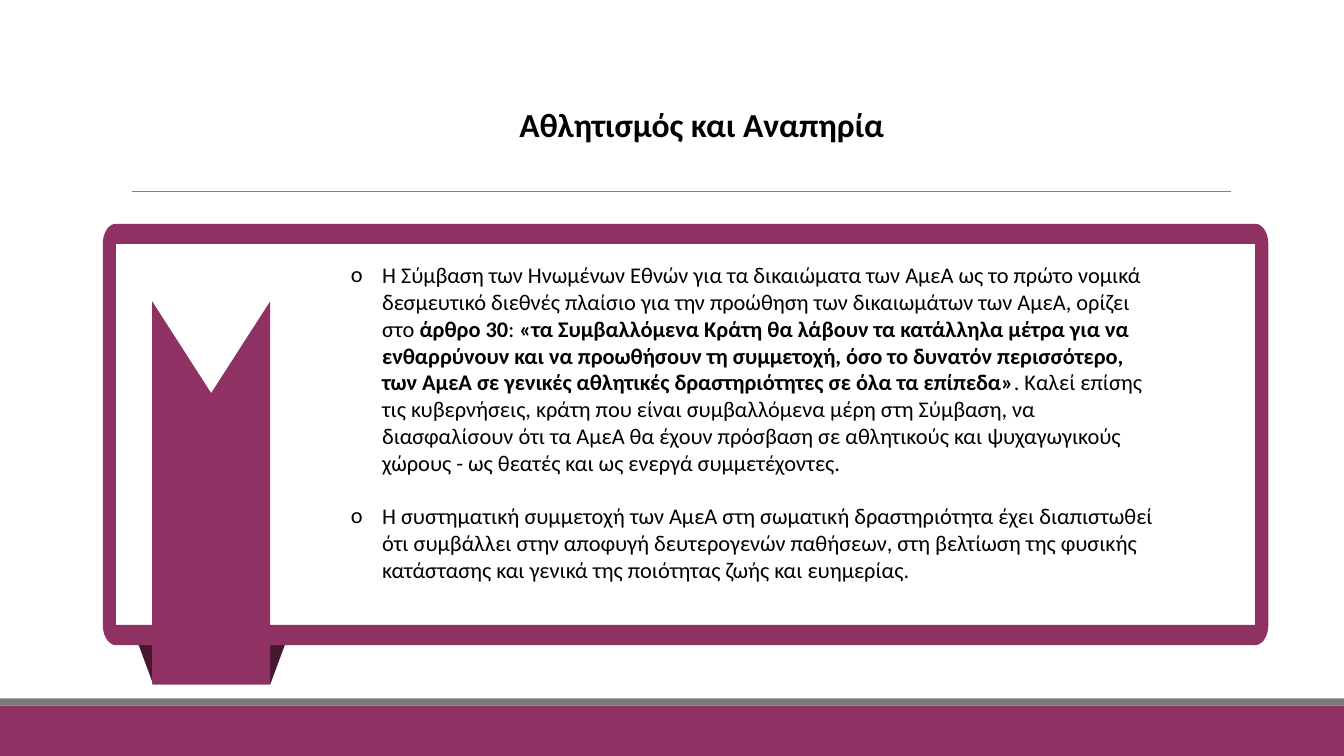
from math import cos, radians, sin

from lxml.etree import SubElement
from pptx import Presentation
from pptx.dml.color import RGBColor
from pptx.enum.shapes import MSO_CONNECTOR as CONN, MSO_SHAPE as SHAPE
from pptx.enum.text import MSO_ANCHOR as ANCHOR, MSO_AUTO_SIZE as AUTO, PP_ALIGN as ALIGN
from pptx.oxml.ns import qn
from pptx.util import Inches, Pt

PLUM = RGBColor(0x90, 0x31, 0x63)
DARK_PLUM = RGBColor(0x48, 0x18, 0x31)
GREY = RGBColor(0x7B, 0x7B, 0x7B)
RULE_GREY = RGBColor(0x80, 0x80, 0x80)
WHITE = RGBColor(0xFF, 0xFF, 0xFF)
BLACK = RGBColor(0, 0, 0)
FONT = "Calibri"

TITLE = "Αθλητισμός και Αναπηρία"
POINTS = [
    [
        ("Η Σύμβαση των Ηνωμένων Εθνών για τα δικαιώματα των ΑμεΑ ως το πρώτο νομικά "
         "δεσμευτικό διεθνές πλαίσιο για την προώθηση των δικαιωμάτων των ΑμεΑ, ορίζει στο ", False),
        ("άρθρο 30", True),
        (": ", False),
        ("«τα Συμβαλλόμενα Κράτη θα λάβουν τα κατάλληλα μέτρα για να ενθαρρύνουν και να "
         "προωθήσουν τη συμμετοχή, όσο το δυνατόν περισσότερο, των ΑμεΑ σε γενικές "
         "αθλητικές δραστηριότητες σε όλα τα επίπεδα»", True),
        (". Καλεί επίσης τις κυβερνήσεις, κράτη που είναι συμβαλλόμενα μέρη στη Σύμβαση, να "
         "διασφαλίσουν ότι τα ΑμεΑ θα έχουν πρόσβαση σε αθλητικούς και ψυχαγωγικούς "
         "χώρους - ως θεατές και ως ενεργά συμμετέχοντες.", False),
    ],
    [
        ("Η συστηματική συμμετοχή των ΑμεΑ στη σωματική δραστηριότητα έχει διαπιστωθεί "
         "ότι συμβάλλει στην αποφυγή δευτερογενών παθήσεων, στη βελτίωση της φυσικής "
         "κατάστασης και γενικά της ποιότητας ζωής και ευημερίας.", False),
    ],
]


def set_attrs(target, values):
    for name, value in values.items():
        setattr(target, name, value)


def paint(sp, color):
    sp.shadow.inherit = False
    sp.fill.solid()
    sp.fill.fore_color.rgb = color
    sp.line.fill.background()


def add_rect(s, x, y, w, h, color):
    paint(s.shapes.add_shape(SHAPE.RECTANGLE, *map(Inches, (x, y, w, h))), color)


def add_outline(s, contours, color):
    contours = [[(Inches(x), Inches(y)) for x, y in points] for points in contours]
    builder = s.shapes.build_freeform(*contours[0][0])
    for i, points in enumerate(contours):
        if i:
            builder.move_to(*points[0])
        builder.add_line_segments(points[1:])
    paint(builder.convert_to_shape(), color)


def place_text(s, sp, x, y, w, h):
    s.shapes.element.append(sp.element)
    set_attrs(sp, {"left": Inches(x), "top": Inches(y), "width": Inches(w), "height": Inches(h)})
    tf = sp.text_frame
    set_attrs(tf, {
        "word_wrap": True, "auto_size": AUTO.NONE, "vertical_anchor": ANCHOR.TOP,
        "margin_left": Inches(0.1), "margin_right": Inches(0.1),
        "margin_top": Inches(0.05), "margin_bottom": Inches(0.05),
    })
    return tf


def add_run(p, text, size, bold):
    r = p.add_run()
    r.text = text
    set_attrs(r.font, {"name": FONT, "size": Pt(size), "bold": bold})
    r.font.color.rgb = BLACK


def add_bullet(p):
    p_pr = p._p.get_or_add_pPr()
    p_pr.set("marL", str(Inches(0.31)))
    p_pr.set("indent", str(Inches(-0.31)))
    SubElement(p_pr, qn("a:buFont")).set("typeface", FONT)
    SubElement(p_pr, qn("a:buChar")).set("char", "o")


def add_footer(s, x, y, w, h):
    strip = 0.07
    add_rect(s, x, y + strip, w, h - strip, PLUM)
    add_rect(s, x, y, w, strip, GREY)


def add_header(s, x, y, w, h):
    rule = s.shapes.add_connector(CONN.STRAIGHT, *map(Inches, (x, y + h, x + w, y + h)))
    rule.line.color.rgb = RULE_GREY
    rule.line.width = Pt(0.5)
    SubElement(rule.element.spPr, qn("a:effectLst"))
    tf = place_text(s, s.shapes.title, x + 3.74, y, 3.97, 0.5)
    p = tf.paragraphs[0]
    p.alignment = ALIGN.LEFT
    add_run(p, TITLE, 24, True)


def add_frame(s, x, y, w, h):
    rx, ry = 0.13, 0.2
    left, right, top, bottom = x + rx, x + w - rx, y + ry, y + h - ry
    corners = [(right, bottom), (left, bottom), (left, top), (right, top)]
    rim = [
        (cx + rx * cos(radians(angle)), cy + ry * sin(radians(angle)))
        for i, (cx, cy) in enumerate(corners)
        for angle in range(90 * i, 90 * i + 91, 10)
    ]
    add_rect(s, left, top, right - left, bottom - top, WHITE)
    add_outline(s, [rim, corners[::-1]], PLUM)


def add_fold(s, x, y, w, h):
    slant = 0.33
    add_outline(s, [[(x, y), (x + w, y), (x + w - slant, y + h), (x + slant, y + h)]], DARK_PLUM)


def add_ribbon(s, x, y, w, h):
    notch = (x + w / 2, y + 0.91)
    add_outline(s, [[(x, y), notch, (x + w, y), (x + w, y + h), (x, y + h)]], PLUM)


def add_points(s, x, y, w, h):
    tf = place_text(s, s.placeholders[1], x, y, w, h)
    for i, runs in enumerate(POINTS):
        p = tf.add_paragraph() if i else tf.paragraphs[0]
        set_attrs(p, {"alignment": ALIGN.LEFT, "line_spacing": 1.0,
                      "space_before": Pt(19 if i else 0), "space_after": Pt(0)})
        add_bullet(p)
        for text, bold in runs:
            add_run(p, text, 16, bold)


def add_panel(s, x, y, w, h):
    add_fold(s, x + 0.17, y + 3.68, 1.82, 0.89)
    add_frame(s, x, y, w, h)
    add_ribbon(s, x + 0.49, y + 0.77, 1.17, 3.8)
    add_points(s, x + 2.36, y + 0.32, 8.19, 3.64)


def main():
    prs = Presentation()
    prs.slide_width, prs.slide_height = Inches(13.33), Inches(7.5)
    s = prs.slides.add_slide(prs.slide_layouts[1])
    add_footer(s, 0, 6.93, 13.33, 0.57)
    add_header(s, 1.31, 0.98, 10.9, 0.92)
    add_panel(s, 1.02, 2.22, 11.56, 4.18)
    prs.save("out.pptx")


if __name__ == "__main__":
    main()
